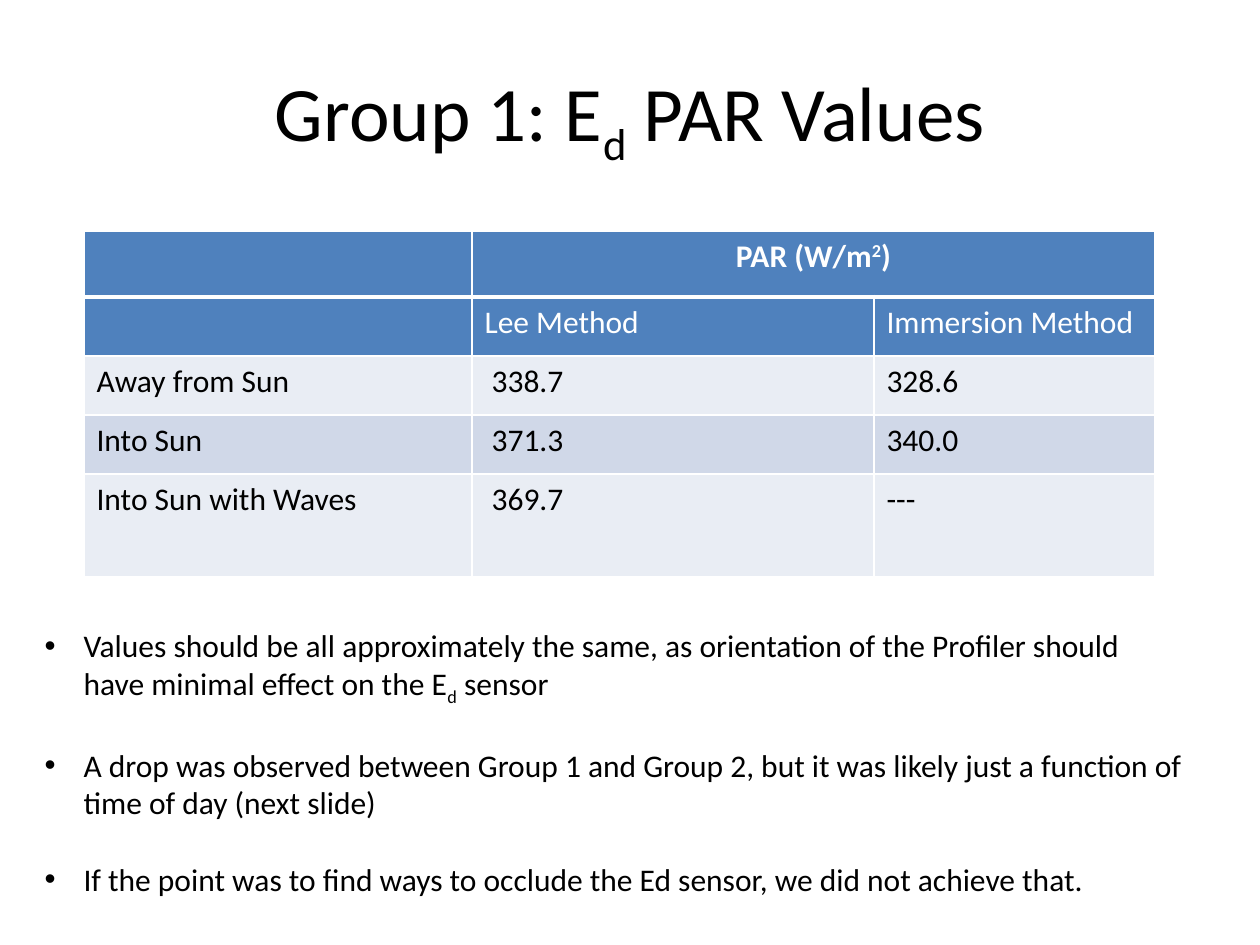
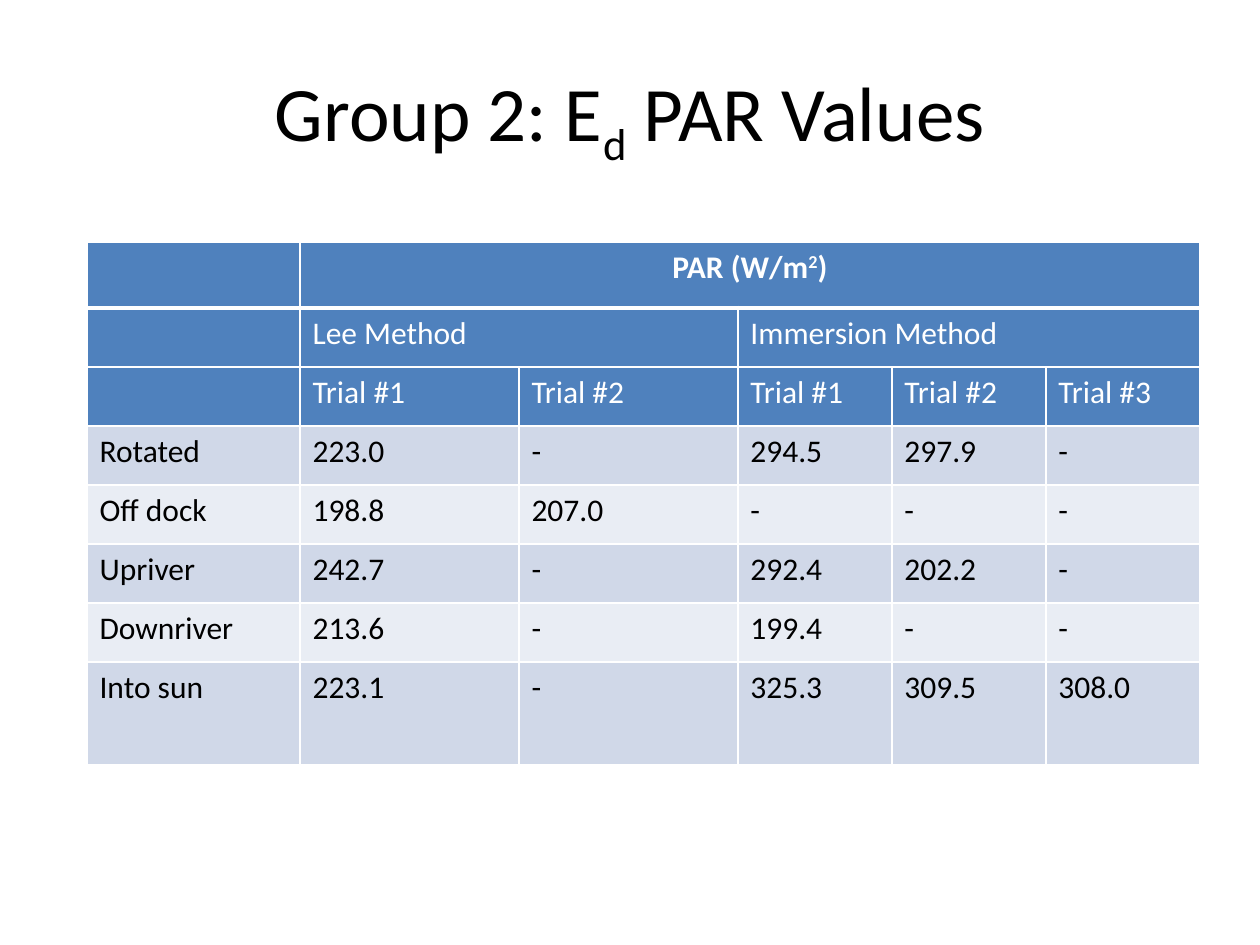
from pptx import Presentation
from pptx.dml.color import RGBColor as RGB
from pptx.enum.text import MSO_ANCHOR as Anchor, PP_ALIGN as Align
from pptx.oxml import parse_xml
from pptx.oxml.ns import nsdecls
from pptx.util import Emu, Pt

PX = 914400 // 126  # EMU in one px
FONT = "Calibri"
COLORS = {
    "head": "4F81BD",
    "light": "E9EDF4",
    "dark": "D0D8E8",
    "line": "FFFFFF",
    "white": "FFFFFF",
    "black": "000000",
}
SUB, SUPER = -25000, 30000
TITLE_BOX = (63, 38, 1134, 158)
UNIT = "PAR (W/m|2|)"
TOP_ROW, ROW, LAST_ROW = 66, 59, 103


def px(n):
    return Emu(n * PX)


def color(name):
    return RGB.from_string(COLORS[name])


def place(shape, box):
    shape.left, shape.top, shape.width, shape.height = map(px, box)


# Text: parts between bars are lowered or raised
def write(para, text, size, ink="black", bold=False, shift=SUB):
    for i, part in enumerate(text.split("|")):
        if part:
            run = para.add_run()
            run.text = part
            if i % 2:
                run.font._element.set("baseline", str(shift))
    for font in [para.font] + [run.font for run in para.runs]:
        font.name, font.size, font.bold = FONT, Pt(size), bold
        font.color.rgb = color(ink)


def add_title(slide, text):
    title = slide.shapes.title
    place(title, TITLE_BOX)
    title.text_frame.vertical_anchor = Anchor.MIDDLE
    para = title.text_frame.paragraphs[0]
    para.alignment = Align.CENTER
    write(para, text, 44)


def add_list(slide, box, items):
    body = slide.placeholders[1]
    place(body, box)
    frame = body.text_frame
    for i, item in enumerate(items):
        para = frame.add_paragraph() if i else frame.paragraphs[0]
        write(para, item, 18)
        para.space_before = Pt(22 if i else 0)
        props = para._p.get_or_add_pPr()
        props.set("marL", str(px(39)))
        props.set("indent", str(px(-39)))


# Tables
def add_edges(cell, top, bottom):
    props = cell._tc.get_or_add_tcPr()
    for side, width in zip("LRTB", (1, 1, top, bottom)):
        props.append(parse_xml(
            f'<a:ln{side} {nsdecls("a")} w="{Pt(width)}"><a:solidFill>'
            f'<a:srgbClr val="{COLORS["line"]}"/></a:solidFill></a:ln{side}>'))


def add_grid(slide, left, top, widths, rows, heads):
    """None in a row joins that cell to the one on its left."""
    tall = [TOP_ROW] + [ROW] * (len(rows) - 2) + [LAST_ROW]
    frame = slide.shapes.add_table(
        len(rows), len(widths), *map(px, (left, top, sum(widths), sum(tall))))
    table = frame.table
    table.horz_banding = False
    for col, width in zip(table.columns, widths):
        col.width = px(width)
    for r, (row, high) in enumerate(zip(rows, tall)):
        table.rows[r].height = px(high)
        band = "head" if r < heads else "dark" if r % 2 else "light"
        for c, text in enumerate(row):
            cell = table.cell(r, c)
            add_edges(cell, 3 if r == 1 else 1, 3 if r == 0 else 1)
            cell.fill.solid()
            cell.fill.fore_color.rgb = color(band)
            if text is None:
                continue
            para = cell.text_frame.paragraphs[0]
            if r == 0:
                para.alignment = Align.CENTER
            write(para, text, 18, "white" if r < heads else "black",
                  r == 0, SUPER)
            end = c
            while end + 1 < len(row) and row[end + 1] is None:
                end += 1
            if end > c:
                cell.merge(table.cell(r, end))


def main():
    deck = Presentation()
    deck.slide_width, deck.slide_height = px(1260), px(945)

    # Group 1: table and notes on it
    slide = deck.slides.add_slide(deck.slide_layouts[1])
    add_title(slide, "Group 1: E|d| PAR Values")
    add_grid(slide, 84, 231, [388, 402, 281], [
        ["", UNIT, None],
        ["", "Lee Method", "Immersion Method"],
        ["Away from Sun", " 338.7", "328.6"],
        ["Into Sun", " 371.3", "340.0"],
        ["Into Sun with Waves", " 369.7", "---"],
    ], heads=2)
    add_list(slide, (32, 620, 1166, 280), [
        "Values should be all approximately the same, as orientation of the "
        "Profiler should have minimal effect on the E|d| sensor",
        "A drop was observed between Group 1 and Group 2, but it was likely "
        "just a function of time of day (next slide)",
        "If the point was to find ways to occlude the Ed sensor, "
        "we did not achieve that.",
    ])

    # Group 2: table of trials
    slide = deck.slides.add_slide(deck.slide_layouts[5])
    add_title(slide, "Group 2: E|d| PAR Values")
    add_grid(slide, 87, 242, [213] + [219] * 2 + [154] * 3, [
        ["", UNIT, None, None, None, None],
        ["", "Lee Method", None, "Immersion Method", None, None],
        ["", "Trial #1", "Trial #2", "Trial #1", "Trial #2", "Trial #3"],
        ["Rotated", "223.0", "-", "294.5", "297.9", "-"],
        ["Off dock", "198.8", "207.0", "-", "-", "-"],
        ["Upriver", "242.7", "-", "292.4", "202.2", "-"],
        ["Downriver", "213.6", "-", "199.4", "-", "-"],
        ["Into sun", "223.1", "-", "325.3", "309.5", "308.0"],
    ], heads=3)

    deck.save("out.pptx")


if __name__ == "__main__":
    main()
